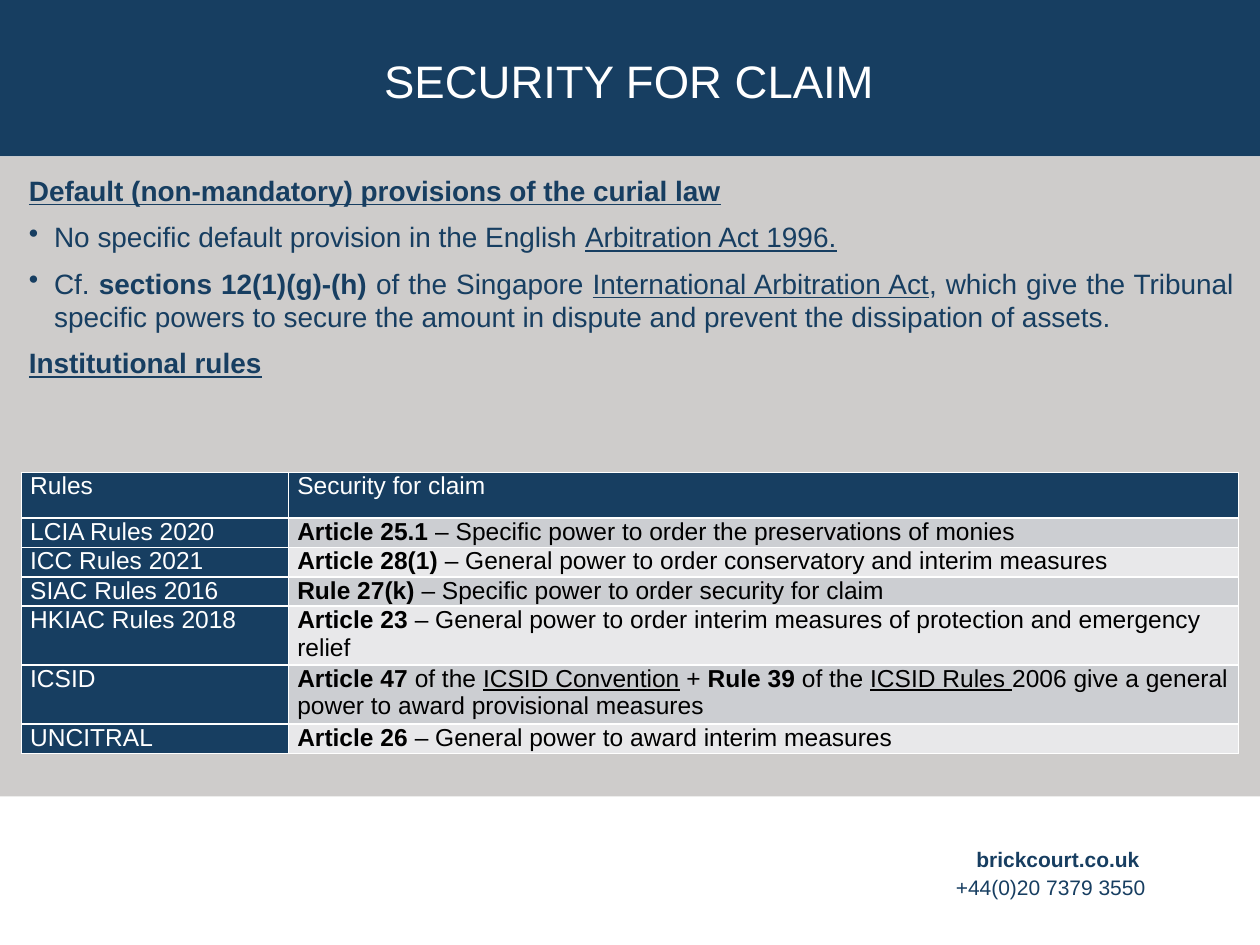
from dataclasses import dataclass

from lxml import etree
from pptx import Presentation
from pptx import util as u
from pptx.dml.color import RGBColor
from pptx.enum import shapes, text
from pptx.oxml import ns

COLORS = {
    "navy": "173E61",
    "stone": "CECCCB",
    "white": "FFFFFF",
    "black": "000000",
    "dark_band": "CCCED2",
    "light_band": "E8E8EA",
}
FONT = "Arial"


@dataclass(frozen=True)
class Span:
    words: str
    bold: bool = False
    underline: bool = False


@dataclass(frozen=True)
class Item:
    spans: tuple[Span, ...]
    bullet: bool = False


@dataclass(frozen=True)
class Rule:
    source: str
    power: tuple[Span, ...]
    height: float = 0.22


@dataclass(frozen=True)
class Band:
    top: float
    height: float
    color: str


BANDS = (Band(1.24, 5.08, "stone"), Band(0, 1.24, "navy"))

ITEMS = (
    Item((Span("Default (non-mandatory) provisions of the curial law", True, True),)),
    Item((Span("No specific default provision in the English "),
          Span("Arbitration Act 1996.", underline=True)), True),
    Item((Span("Cf. "), Span("sections 12(1)(g)-(h) ", True),
          Span("of the Singapore "),
          Span("International Arbitration Act", underline=True),
          Span(", which give the Tribunal specific powers to secure the amount "
               "in dispute and prevent the dissipation of assets.")), True),
    Item((Span("Institutional rules", True, True),)),
)

RULES = (
    Rule("LCIA Rules 2020", (Span("Article 25.1 ", True),
         Span("– Specific power to order the preservations of monies"))),
    Rule("ICC Rules 2021", (Span("Article 28(1) ", True),
         Span("– General power to order conservatory and interim measures"))),
    Rule("SIAC Rules 2016", (Span("Rule 27(k) ", True),
         Span("– Specific power to order security for claim"))),
    Rule("HKIAC Rules 2018", (Span("Article 23 ", True),
         Span("– General power to order interim measures of protection "
              "and emergency relief")), 0.44),
    Rule("ICSID", (Span("Article 47 ", True), Span("of the "),
         Span("ICSID Convention", underline=True), Span(" + "),
         Span("Rule 39 ", True), Span("of the "),
         Span("ICSID Rules ", underline=True),
         Span("2006 give a general power to award provisional measures")), 0.44),
    Rule("UNCITRAL", (Span("Article 26 ", True),
         Span("– General power to award interim measures"))),
)


def rgb(name: str) -> RGBColor:
    return RGBColor.from_string(COLORS[name])


def set_insets(frame, left: float, top: float, right: float, bottom: float) -> None:
    frame.margin_left, frame.margin_top = u.Inches(left), u.Inches(top)
    frame.margin_right, frame.margin_bottom = u.Inches(right), u.Inches(bottom)


def add_spans(para, spans: tuple[Span, ...], size: int, color: str) -> None:
    for span in spans:
        run = para.add_run()
        run.text = span.words
        run.font.name = FONT
        run.font.size = u.Pt(size)
        run.font.bold = span.bold
        run.font.underline = span.underline
        run.font.color.rgb = rgb(color)


def add_band(page, band: Band) -> None:
    shape = page.shapes.add_shape(
        shapes.MSO_SHAPE.RECTANGLE, 0, u.Inches(band.top),
        u.Inches(10), u.Inches(band.height))
    shape.shadow.inherit = False
    shape.fill.solid()
    shape.fill.fore_color.rgb = rgb(band.color)
    shape.line.fill.background()


def add_title(page, words: str) -> None:
    title = page.shapes.title
    title.left, title.top = u.Inches(0.93), u.Inches(0.4)
    title.width, title.height = u.Inches(8.13), u.Inches(0.53)
    title.element.getparent().append(title.element)
    frame = title.text_frame
    set_insets(frame, 0, 0, 0, 0)
    frame.vertical_anchor = text.MSO_ANCHOR.MIDDLE
    para = frame.paragraphs[0]
    para.alignment = text.PP_ALIGN.CENTER
    para.line_spacing = 0.9
    add_spans(para, (Span(words),), 26, "white")


def add_bullet(para) -> None:
    properties = para._p.get_or_add_pPr()
    properties.set("marL", str(u.Inches(0.2)))
    properties.set("indent", str(u.Inches(-0.2)))
    etree.SubElement(properties, ns.qn("a:buChar"), char="•")


def add_body(page, items: tuple[Item, ...]) -> None:
    box = page.shapes.add_textbox(
        u.Inches(0.23), u.Inches(1.38), u.Inches(9.66), u.Inches(4.94))
    frame = box.text_frame
    frame.word_wrap = True
    set_insets(frame, 0, 0, 0.1, 0.05)
    for index, item in enumerate(items):
        para = frame.add_paragraph() if index else frame.paragraphs[0]
        para.alignment = text.PP_ALIGN.JUSTIFY
        para.line_spacing = u.Pt(19)
        para.space_before = u.Pt(7.5 if index else 0)
        if item.bullet:
            add_bullet(para)
        add_spans(para, item.spans, 16, "navy")


def add_contact(page, lines: tuple[Span, ...]) -> None:
    box = page.shapes.add_textbox(
        u.Inches(5.81), u.Inches(6.72), u.Inches(3.38), u.Inches(0.4))
    frame = box.text_frame
    frame.word_wrap = True
    frame.vertical_anchor = text.MSO_ANCHOR.MIDDLE
    for index, line in enumerate(lines):
        para = frame.add_paragraph() if index else frame.paragraphs[0]
        para.alignment = text.PP_ALIGN.RIGHT
        para.line_spacing = u.Pt(16)
        add_spans(para, (line,), 12, "navy")


def fill_cell(cell, spans: tuple[Span, ...], color: str, fill: str) -> None:
    properties = cell._tc.get_or_add_tcPr()
    for side in ("lnL", "lnR", "lnT", "lnB"):
        line = etree.SubElement(properties, ns.qn(f"a:{side}"), w=str(u.Pt(1)))
        solid = etree.SubElement(line, ns.qn("a:solidFill"))
        etree.SubElement(solid, ns.qn("a:srgbClr"), val=COLORS["white"])
    cell.fill.solid()
    cell.fill.fore_color.rgb = rgb(fill)
    set_insets(cell, 0.07, 0, 0.07, 0)
    add_spans(cell.text_frame.paragraphs[0], spans, 14, color)


def add_rules_table(page, rules: tuple[Rule, ...]) -> None:
    heights = [0.36] + [rule.height for rule in rules]
    table = page.shapes.add_table(
        len(heights), 2, u.Inches(0.17), u.Inches(3.75),
        u.Inches(9.66), u.Inches(sum(heights))).table
    table.first_row = table.horz_banding = False
    for column, width in zip(table.columns, (2.12, 7.54)):
        column.width = u.Inches(width)
    for row, height in zip(table.rows, heights):
        row.height = u.Inches(height)
    for column, heading in enumerate(("Rules", "Security for claim")):
        fill_cell(table.cell(0, column), (Span(heading),), "white", "navy")
    for row, rule in enumerate(rules, start=1):
        fill_cell(table.cell(row, 0), (Span(rule.source),), "white", "navy")
        fill = "dark_band" if row % 2 else "light_band"
        fill_cell(table.cell(row, 1), rule.power, "black", fill)


def main() -> None:
    deck = Presentation()
    deck.slide_width, deck.slide_height = u.Inches(10), u.Inches(7.5)
    page = deck.slides.add_slide(deck.slide_layouts[5])
    for band in BANDS:
        add_band(page, band)
    add_contact(page, (Span("brickcourt.co.uk ", True), Span("+44(0)20 7379 3550")))
    add_title(page, "SECURITY FOR CLAIM")
    add_body(page, ITEMS)
    add_rules_table(page, RULES)
    deck.save("out.pptx")


if __name__ == "__main__":
    main()
